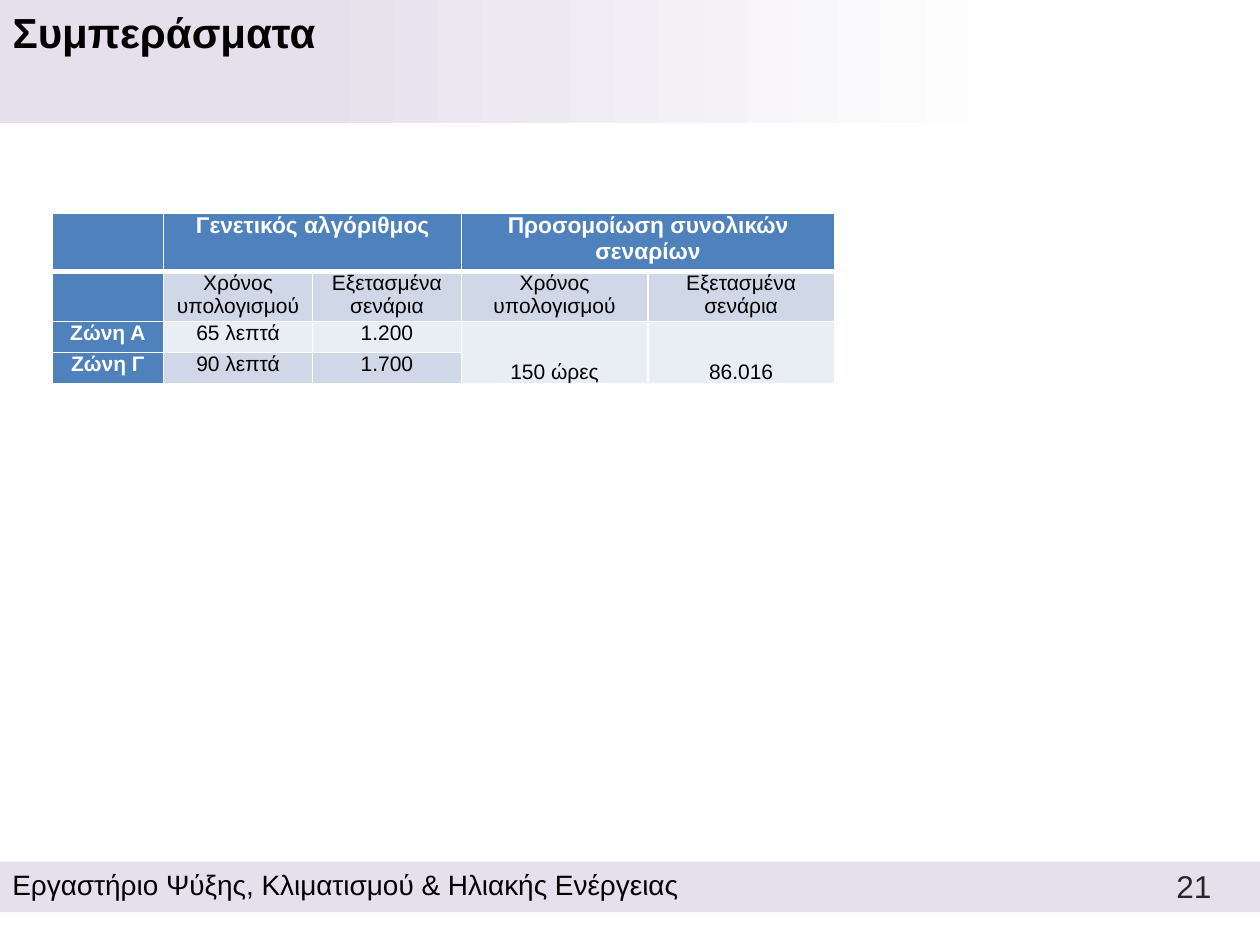
from lxml import etree
from pptx import Presentation
from pptx import util as u
from pptx.dml.color import RGBColor
from pptx.enum import shapes, text
from pptx.oxml import ns

FONT = "Arial"
BLACK = RGBColor(0x00, 0x00, 0x00)
DARK = RGBColor(0x26, 0x26, 0x26)
WHITE = RGBColor(0xFF, 0xFF, 0xFF)
LAVENDER = RGBColor(0xE6, 0xE0, 0xEC)
BLUE = RGBColor(0x4F, 0x81, 0xBD)
BAND_DARK = RGBColor(0xD0, 0xD8, 0xE8)
BAND_LIGHT = RGBColor(0xE9, 0xED, 0xF4)

COLUMN_WIDTHS = [2.25, 3, 3, 3.76, 3.76]
ROW_HEIGHTS = [1.17, 1.01, 0.63, 0.63]
ROW_FILLS = [BLUE, BAND_DARK, BAND_LIGHT, BAND_DARK]
SUBHEADS = ["Χρόνος υπολογισμού", "Εξετασμένα σενάρια"]
ROWS = [
    ["", "Γενετικός αλγόριθμος", "", "Προσομοίωση συνολικών σεναρίων", ""],
    ["", *SUBHEADS, *SUBHEADS],
    ["Ζώνη Α", "65 λεπτά", "1.200", "150 ώρες", "86.016"],
    ["Ζώνη Γ", "90 λεπτά", "1.700", "", ""],
]
MERGES = [(0, 1, 0, 2), (0, 3, 0, 4), (2, 3, 3, 3), (2, 4, 3, 4)]


def format_paragraph(paragraph, size, color, bold=False, align=text.PP_ALIGN.LEFT):
    """Set the font and alignment of a paragraph."""
    paragraph.alignment = align
    font = paragraph.font
    font.name, font.size, font.bold = FONT, u.Pt(size), bold
    font.color.rgb = color


def add_band(slide, top, width, height):
    """Add a lavender rectangle starting at the left edge."""
    band = slide.shapes.add_shape(
        shapes.MSO_SHAPE.RECTANGLE, 0, u.Cm(top), u.Cm(width), u.Cm(height))
    band.shadow.inherit = False
    band.line.fill.background()
    band.fill.solid()
    band.fill.fore_color.rgb = LAVENDER
    return band


def fade_to_white(band):
    """Fill a band with a gradient running to white on the right."""
    band.fill.gradient()
    band.fill.gradient_angle = 0
    for stop, position, color in zip(
            band.fill.gradient_stops, (0.3, 1), (LAVENDER, WHITE)):
        stop.position = position
        stop.color.rgb = color


def add_label(slide, content, left, top, width, height, size, color, align):
    """Add a one-line text box."""
    box = slide.shapes.add_textbox(u.Cm(left), u.Cm(top), u.Cm(width), u.Cm(height))
    box.text_frame.word_wrap = True
    paragraph = box.text_frame.paragraphs[0]
    paragraph.text = content
    format_paragraph(paragraph, size, color, align=align)


def place_title(slide, content):
    """Fill the title placeholder and bring it in front of the bands."""
    title = slide.shapes.title
    title.left, title.top, title.width, title.height = 0, 0, u.Cm(15.98), u.Cm(1.4)
    title.text_frame.text = content
    title.text_frame.vertical_anchor = text.MSO_ANCHOR.TOP
    format_paragraph(title.text_frame.paragraphs[0], 24, BLACK, bold=True)
    title.element.getparent().append(title.element)


def set_borders(cell, top, bottom):
    """Draw white cell borders with the given top and bottom widths."""
    properties = cell._tc.get_or_add_tcPr()
    widths = {"a:lnL": 1, "a:lnR": 1, "a:lnT": top, "a:lnB": bottom}
    for tag, width in widths.items():
        line = etree.SubElement(properties, ns.qn(tag), w=str(u.Pt(width)))
        fill = etree.SubElement(line, ns.qn("a:solidFill"))
        etree.SubElement(fill, ns.qn("a:srgbClr"), val=str(WHITE))


def format_cell(cell, content, row, column):
    """Write and format one table cell according to its place."""
    heading = row == 0 or column == 0
    cell.margin_left = cell.margin_right = u.Cm(0.18)
    cell.margin_top = cell.margin_bottom = 0
    set_borders(cell, 3 if row == 1 else 1, 3 if row == 0 else 1)
    cell.fill.solid()
    cell.fill.fore_color.rgb = BLUE if heading else ROW_FILLS[row]
    paragraph = cell.text_frame.paragraphs[0]
    paragraph.text = content
    format_paragraph(paragraph, 13 if row == 0 else 12, WHITE if heading else BLACK,
                     heading, text.PP_ALIGN.CENTER)


def add_results_table(slide):
    """Add the table comparing both calculation methods."""
    table = slide.shapes.add_table(
        len(ROWS), len(COLUMN_WIDTHS), u.Cm(1.05), u.Cm(4.3),
        u.Cm(sum(COLUMN_WIDTHS)), u.Cm(sum(ROW_HEIGHTS))).table
    table.first_row = table.horz_banding = False
    for column, width in zip(table.columns, COLUMN_WIDTHS):
        column.width = u.Cm(width)
    for row, height in zip(table.rows, ROW_HEIGHTS):
        row.height = u.Cm(height)
    for row, contents in enumerate(ROWS):
        for column, content in enumerate(contents):
            format_cell(table.cell(row, column), content, row, column)
    for top, left, bottom, right in MERGES:
        origin = table.cell(top, left)
        origin.merge(table.cell(bottom, right))
        if bottom > top:
            origin.vertical_anchor = text.MSO_ANCHOR.BOTTOM


def main():
    """Build the conclusions slide."""
    presentation = Presentation()
    presentation.slide_width, presentation.slide_height = u.Cm(25.4), u.Cm(19.05)
    slide = presentation.slides.add_slide(presentation.slide_layouts[5])
    fade_to_white(add_band(slide, 0, 20.45, 2.49))
    add_band(slide, 17.37, 25.4, 1.02)
    add_label(slide, "Εργαστήριο Ψύξης, Κλιματισμού & Ηλιακής Ενέργειας",
              0, 17.37, 16.43, 0.94, 16, BLACK, text.PP_ALIGN.LEFT)
    add_label(slide, "21", 18.95, 17.35, 5.72, 1.02, 18, DARK, text.PP_ALIGN.RIGHT)
    place_title(slide, "Συμπεράσματα")
    add_results_table(slide)
    presentation.save("out.pptx")


if __name__ == "__main__":
    main()
